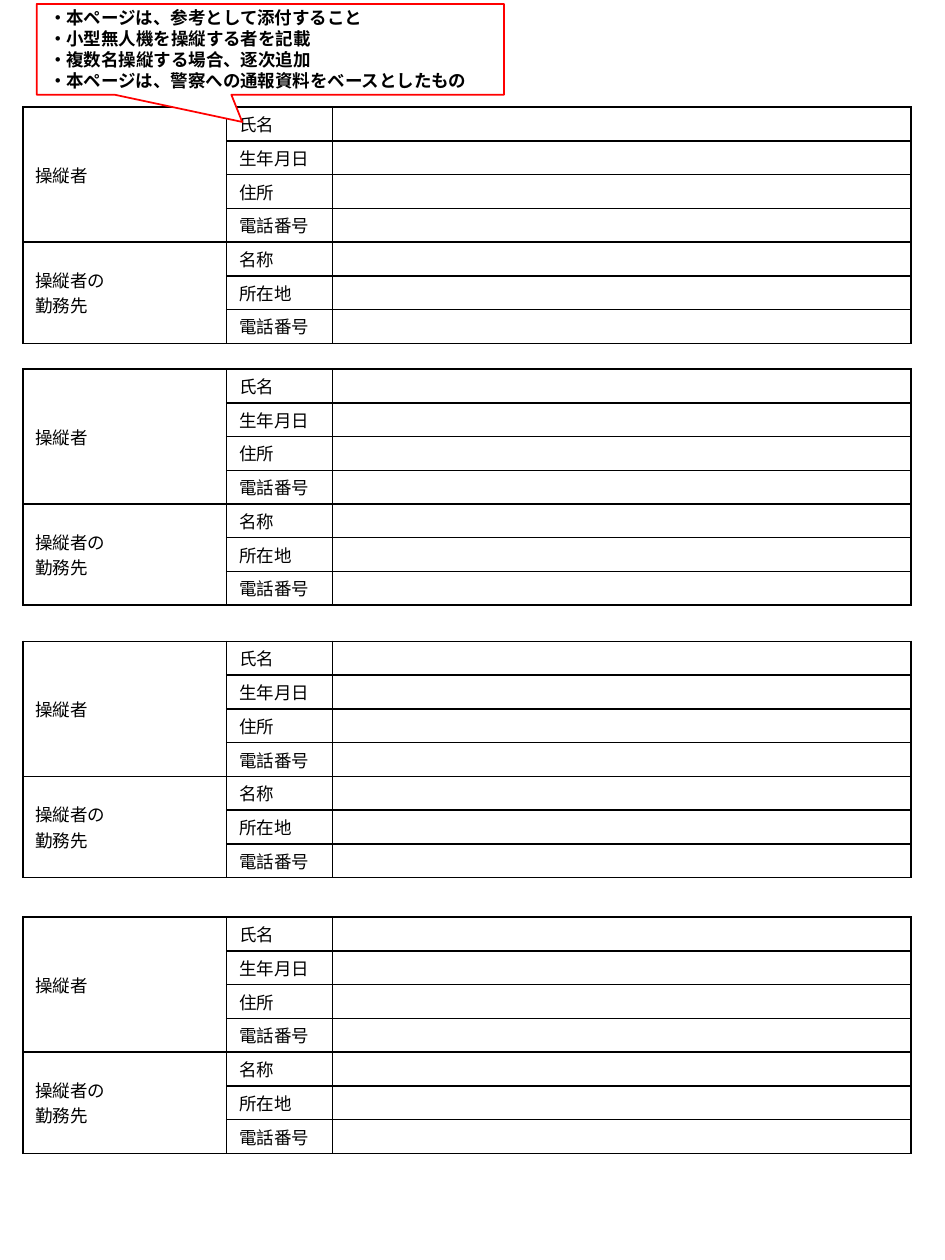
from lxml import etree
from pptx import Presentation, util as u
from pptx.dml.color import RGBColor
from pptx.enum import shapes, text
from pptx.oxml.ns import qn

BLACK, WHITE, RED = "000000", "FFFFFF", "FF0000"
GROUPS = [
    ("操縦者", ["氏名", "生年月日", "住所", "電話番号"]),
    ("操縦者の\n勤務先", ["名称", "所在地", "電話番号"]),
]
NOTES = [
    "・本ページは、参考として添付すること",
    "・小型無人機を操縦する者を記載",
    "・複数名操縦する場合、逐次追加",
    "・本ページは、警察への通報資料をベースとしたもの",
]
TOPS = [2.16, 7.44, 12.93, 18.49]
COLS = [4.11, 2.13, 11.66]
ROW = 0.68


def color(code):
    return RGBColor.from_string(code)


class Page:
    face = "Noto Sans CJK JP"
    size = u.Pt(10)
    line = u.Pt(1)

    def __init__(self, slide):
        self.slide = slide

    def label(self, frame, words, bold=False, pitch=None):
        frame.text = words
        for para in frame.paragraphs:
            para.alignment = text.PP_ALIGN.LEFT
            para.line_spacing = pitch
            font = para.font
            font.size, font.bold, font.name = self.size, bold, self.face
            font.color.rgb = color(BLACK)
            # East Asian typeface
            base = para._p.pPr.find(qn("a:defRPr"))
            etree.SubElement(base, qn("a:ea"), typeface=self.face)

    def border(self, cell):
        props = cell._tc.get_or_add_tcPr()
        for side in ("lnL", "lnR", "lnT", "lnB"):
            edge = etree.SubElement(props, qn("a:" + side), w=str(self.line))
            fill = etree.SubElement(edge, qn("a:solidFill"))
            etree.SubElement(fill, qn("a:srgbClr"), val=BLACK)

    def table(self, left, top, groups):
        count = sum(len(items) for _, items in groups)
        grid = self.slide.shapes.add_table(
            count, len(COLS), u.Cm(left), u.Cm(top),
            u.Cm(sum(COLS)), u.Cm(ROW * count)).table
        grid.first_row = grid.horz_banding = False
        for col, width in zip(grid.columns, COLS):
            col.width = u.Cm(width)
        for row in grid.rows:
            row.height = u.Cm(ROW)

        # Wording by group
        words = {}
        start = 0
        for title, items in groups:
            words[start, 0] = title
            for step, item in enumerate(items):
                words[start + step, 1] = item
            end = start + len(items)
            grid.cell(start, 0).merge(grid.cell(end - 1, 0))
            start = end

        # Cell style
        for r in range(count):
            for c in range(len(COLS)):
                cell = grid.cell(r, c)
                cell.margin_top = cell.margin_bottom = u.Cm(0.05)
                cell.vertical_anchor = text.MSO_ANCHOR.MIDDLE
                self.border(cell)
                cell.fill.background()
                self.label(cell.text_frame, words.get((r, c), ""))

    def callout(self, left, top, width, height, lines, tail):
        box = self.slide.shapes.add_shape(
            shapes.MSO_SHAPE.RECTANGULAR_CALLOUT,
            u.Cm(left), u.Cm(top), u.Cm(width), u.Cm(height))
        box.shadow.inherit = False
        box.adjustments[0], box.adjustments[1] = tail
        box.fill.solid()
        box.fill.fore_color.rgb = color(WHITE)
        box.line.color.rgb = color(RED)
        box.line.width = self.line
        frame = box.text_frame
        frame.word_wrap = True
        frame.margin_top = frame.margin_bottom = 0
        frame.vertical_anchor = text.MSO_ANCHOR.MIDDLE
        self.label(frame, "\n".join(lines), bold=True, pitch=u.Pt(12))


def main():
    deck = Presentation()
    deck.slide_width, deck.slide_height = u.Cm(19.05), u.Cm(25.4)
    page = Page(deck.slides.add_slide(deck.slide_layouts[6]))

    # One form per pilot
    for top in TOPS:
        page.table(0.46, top, GROUPS)

    # Guidance for the first form
    page.callout(0.74, 0.08, 9.42, 1.83, NOTES, (-0.06, 0.8))

    deck.save("out.pptx")


if __name__ == "__main__":
    main()
